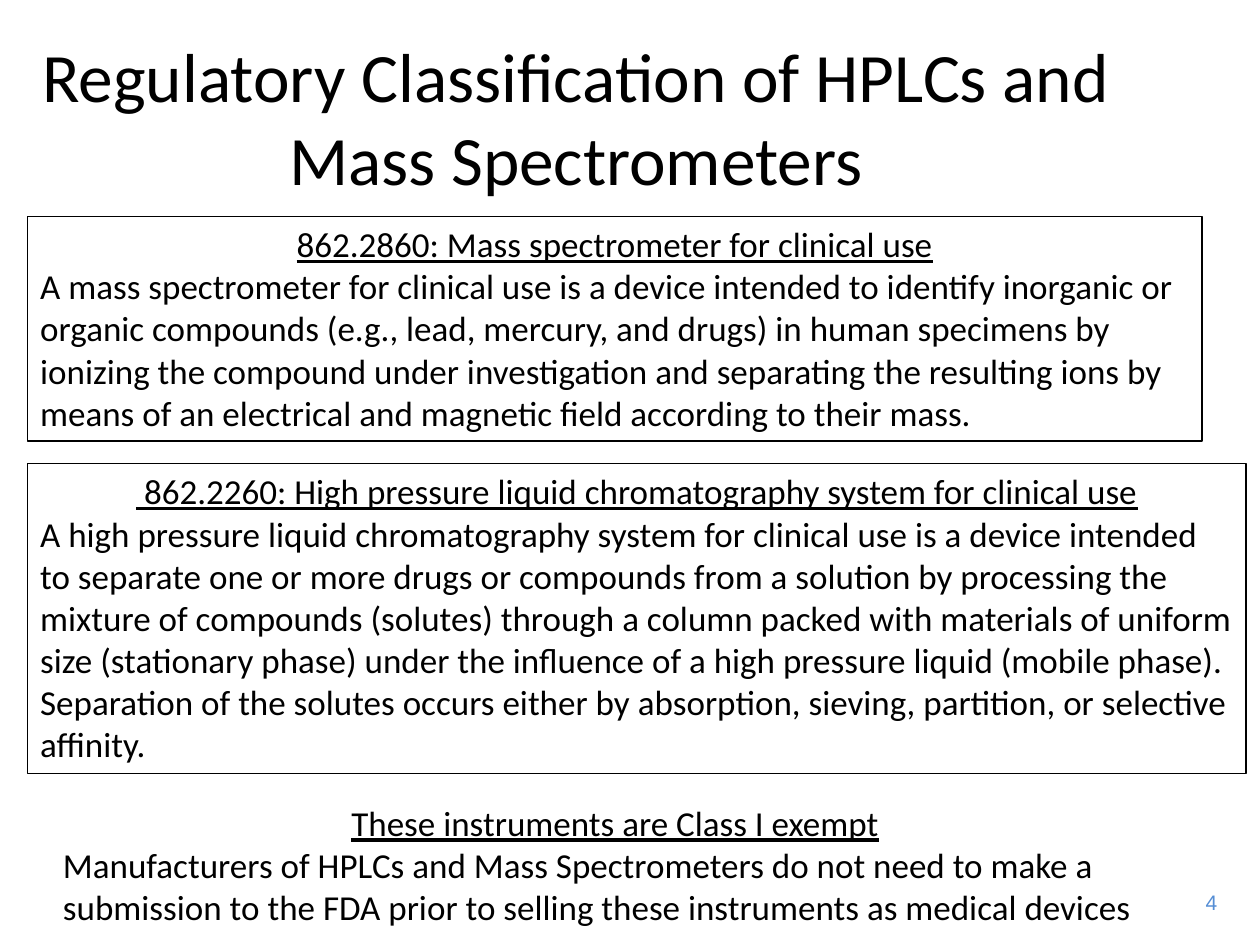
from pptx import Presentation, util as u
from pptx.dml.color import RGBColor
from pptx.enum import shapes, text

COLORS = {"ink": "000000", "number": "558ED5"}
CENTER, LEFT, RIGHT = text.PP_ALIGN.CENTER, text.PP_ALIGN.LEFT, text.PP_ALIGN.RIGHT

TITLE = "Regulatory Classification of HPLCs and Mass Spectrometers"
PAGE_NUMBER = "4"
REGULATIONS = [
    ("862.2860: Mass spectrometer for clinical use",
     "A mass spectrometer for clinical use is a device intended to identify inorganic or "
     "organic compounds (e.g., lead, mercury, and drugs) in human specimens by ionizing the "
     "compound under investigation and separating the resulting ions by means of an "
     "electrical and magnetic field according to their mass.",
     23.67, 4.52),
    (" 862.2260: High pressure liquid chromatography system for clinical use",
     "A high pressure liquid chromatography system for clinical use is a device intended to "
     "separate one or more drugs or compounds from a solution by processing the mixture of "
     "compounds (solutes) through a column packed with materials of uniform size (stationary "
     "phase) under the influence of a high pressure liquid (mobile phase). Separation of the "
     "solutes occurs either by absorption, sieving, partition, or selective affinity.",
     24.56, 6.25),
]
EXEMPTION = (
    "These instruments are Class I exempt",
    "Manufacturers of HPLCs and Mass Spectrometers do not need to make a submission to the "
    "FDA prior to selling these instruments as medical devices",
)

TITLE_FONT = {"name": "Calibri", "size": u.Pt(39.6)}
HEADING_FONT = {"name": "Calibri", "size": u.Pt(20), "underline": True}
BODY_FONT = {"name": "Calibri", "size": u.Pt(20), "underline": False}
NUMBER_FONT = {"name": "Arial", "size": u.Pt(12)}

REGULATION_LEFT, REGULATION_TOP, REGULATION_GAP = 0.56, 4.37, 0.46


def write(frame, paragraphs, color="ink", anchor=text.MSO_ANCHOR.TOP, wrap=True):
    frame.word_wrap = wrap
    frame.vertical_anchor = anchor
    for index, (words, align, look) in enumerate(paragraphs):
        paragraph = frame.add_paragraph() if index else frame.paragraphs[0]
        paragraph.alignment = align
        run = paragraph.add_run()
        run.text = words
        for attribute, value in look.items():
            setattr(run.font, attribute, value)
        run.font.color.rgb = RGBColor.from_string(COLORS[color])


def passage(heading, body):
    return [(heading, CENTER, HEADING_FONT), (body, LEFT, BODY_FONT)]


def place(left, top, width, height):
    return [u.Cm(length) for length in (left, top, width, height)]


deck = Presentation()
deck.slide_width, deck.slide_height = u.Cm(25.4), u.Cm(19.05)
slide = deck.slides.add_slide(deck.slide_layouts[6])

number = slide.shapes.add_textbox(*place(23.75, 17.81, 1.04, 0.76))
write(number.text_frame, [(PAGE_NUMBER, RIGHT, NUMBER_FONT)], "number", wrap=False)

title = slide.shapes.add_textbox(*place(0.18, 0.76, 22.86, 3.18))
write(title.text_frame, [(TITLE, CENTER, TITLE_FONT)], anchor=text.MSO_ANCHOR.MIDDLE)

top = REGULATION_TOP
for heading, body, width, height in REGULATIONS:
    regulation = slide.shapes.add_shape(
        shapes.MSO_SHAPE.RECTANGLE, *place(REGULATION_LEFT, top, width, height))
    regulation.shadow.inherit = False
    regulation.fill.background()
    regulation.line.color.rgb = RGBColor.from_string(COLORS["ink"])
    regulation.line.width = u.Pt(0.75)
    write(regulation.text_frame, passage(heading, body))
    top += height + REGULATION_GAP

exemption = slide.shapes.add_textbox(*place(1.02, 16.03, 22.76, 2.82))
write(exemption.text_frame, passage(*EXEMPTION))

deck.save("out.pptx")
